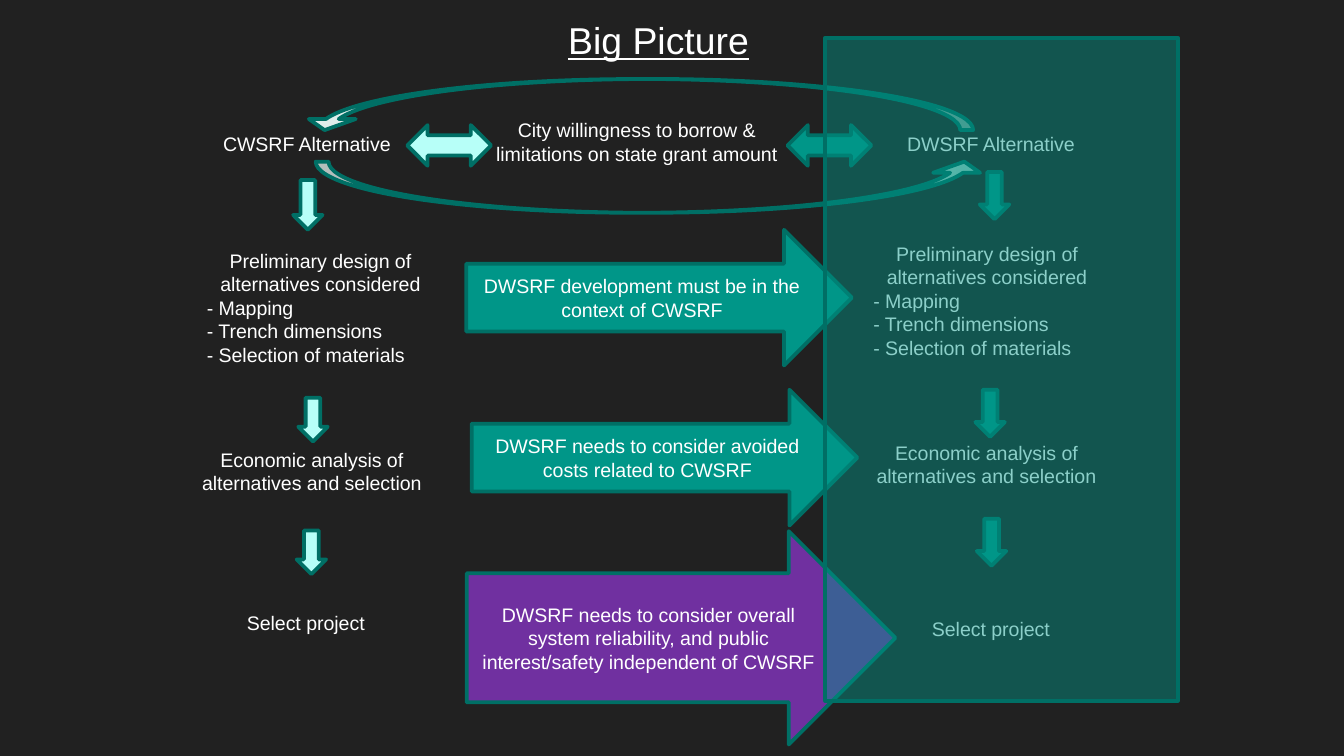
from copy import deepcopy

from pptx import Presentation
from pptx.dml.color import RGBColor
from pptx.enum import shapes, text
from pptx.oxml.ns import qn
from pptx.util import Pt

COLORS = {
    "background": "212121", "white": "FFFFFF", "outline": "006F65",
    "teal": "009688", "mint": "B7FFF8", "purple": "7030A0",
    "curve_dark": "95CDC3", "curve_mid": "C0DED8", "curve_light": "E0EEEC",
}
RGB = {name: RGBColor.from_string(value) for name, value in COLORS.items()}
SHAPE = shapes.MSO_SHAPE

prs = Presentation()
prs.slide_width, prs.slide_height = Pt(720), Pt(405)
s = prs.slides.add_slide(prs.slide_layouts[6])
s.background.fill.solid()
s.background.fill.fore_color.rgb = RGB["background"]


def write(sp, lines, size=10.5):
    """Fill a shape with white text: first line centred, the rest a dashed list."""
    tf = sp.text_frame
    tf.word_wrap = True
    for i, line in enumerate(lines):
        p = tf.paragraphs[0] if i == 0 else tf.add_paragraph()
        p.text = line
        p.font.size, p.font.name = Pt(size), "Arial"
        p.font.color.rgb = RGB["white"]
        p.alignment = text.PP_ALIGN.LEFT if i else text.PP_ALIGN.CENTER
        if i:
            p._p.get_or_add_pPr().set("marL", str(Pt(5.8)))
    return tf


def add_block(kind, box, fill):
    """Add an outlined preset shape with a solid fill."""
    sp = s.shapes.add_shape(kind, *map(Pt, box))
    sp.shadow.inherit = False
    sp.fill.solid()
    sp.fill.fore_color.rgb = RGB[fill]
    sp.line.color.rgb = RGB["outline"]
    sp.line.width = Pt(2)
    return sp


# Title and the text of both columns: box, lines, size
design = ["Preliminary design of alternatives considered",
          "- Mapping", "- Trench dimensions", "- Selection of materials"]
economics = ["Economic analysis of alternatives and selection"]
labels = [
    ((272.2, 5.8, 161.3, 31.7), ["Big Picture"], 20),
    ((253.4, 59.8, 175.7, 32.4),
     ["City willingness to borrow & limitations on state grant amount"], 10.5),
    # CWSRF column
    ((95, 67, 139, 20.2), ["CWSRF Alternative"], 10.5),
    ((97.9, 129.6, 147.6, 70.6), design, 10.5),
    ((88.6, 236.2, 157, 32.4), economics, 10.5),
    ((55.5, 323.6, 216.7, 32.4), ["Select project"], 10.5),
    # DWSRF column
    ((473, 67, 115.9, 20.2), ["DWSRF Alternative"], 10.5),
    ((455, 126, 147.6, 70.6), design, 10.5),
    ((450, 232.6, 157, 32.4), economics, 10.5),
    ((413.2, 327, 235.4, 20.2), ["Select project"], 10.5),
]
for box, lines, size in labels:
    sp = s.shapes.add_textbox(*map(Pt, box))
    tf = write(sp, lines, size)
    tf.auto_size = text.MSO_AUTO_SIZE.SHAPE_TO_FIT_TEXT
    tf.paragraphs[0].font.underline = True if size == 20 else None

# Two-way arrows beside the funding limits
for x, fill in [(218.2, "mint"), (421.9, "teal")]:
    add_block(SHAPE.LEFT_RIGHT_ARROW, (x, 67, 44.9, 21.8), fill)

# Curved arrows linking the two alternatives
for x, y, rotation, angle in [(169.2, 86.6, 0, 180), (161.3, 42.3, 180, 0)]:
    sp = add_block(SHAPE.CURVED_UP_ARROW, (x, y, 360, 27.4), "mint")
    sp.rotation = rotation
    for i, value in enumerate([0.25, 0.917, 0.218]):
        sp.adjustments[i] = value
    sp.fill.gradient()
    sp.fill.gradient_angle = angle
    stops = sp._element.spPr.find(qn("a:gradFill")).find(qn("a:gsLst"))
    stops.insert(1, deepcopy(stops[0]))
    names = ["curve_dark", "curve_mid", "curve_light"]
    for i, (stop, name) in enumerate(zip(sp.fill.gradient_stops, names)):
        stop.position = i / 2
        stop.color.rgb = RGB[name]

# Down arrows between the steps
down_arrows = {
    "mint": [(157, 96.5, 26.6), (159.8, 213.1, 23.4), (158.9, 284.2, 23.4)],
    "teal": [(524.9, 92.2, 25.2), (522.5, 208.8, 25.2), (523.3, 277.9, 25.2)],
}
for fill, places in down_arrows.items():
    for x, y, height in places:
        add_block(SHAPE.DOWN_ARROW, (x, y, 15.8, height), fill)

# Wide arrows from CWSRF to DWSRF: box, fill, shaft share, text
wide_arrows = [
    ((249.8, 123.1, 206.6, 72.7), "teal", 0.5,
     "DWSRF development must be in the context of CWSRF"),
    ((252.7, 208.8, 206.6, 72.7), "teal", 0.5,
     "DWSRF needs to consider avoided costs related to CWSRF"),
    ((250, 284.6, 229.7, 114.3), "purple", 0.605,
     "DWSRF needs to consider overall system reliability, and public "
     "interest/safety independent of CWSRF"),
]
for box, fill, shaft, line in wide_arrows:
    sp = add_block(SHAPE.RIGHT_ARROW, box, fill)
    sp.adjustments[0] = shaft
    write(sp, [line]).vertical_anchor = text.MSO_ANCHOR.MIDDLE

# Translucent panel over the DWSRF column
sp = add_block(SHAPE.RECTANGLE, (442.1, 20.2, 188.9, 355.2), "teal")
color = sp._element.spPr.find(qn("a:solidFill")).find(qn("a:srgbClr"))
alpha = color.makeelement(qn("a:alpha"), {"val": "45000"})
color.append(alpha)

prs.save("out.pptx")
